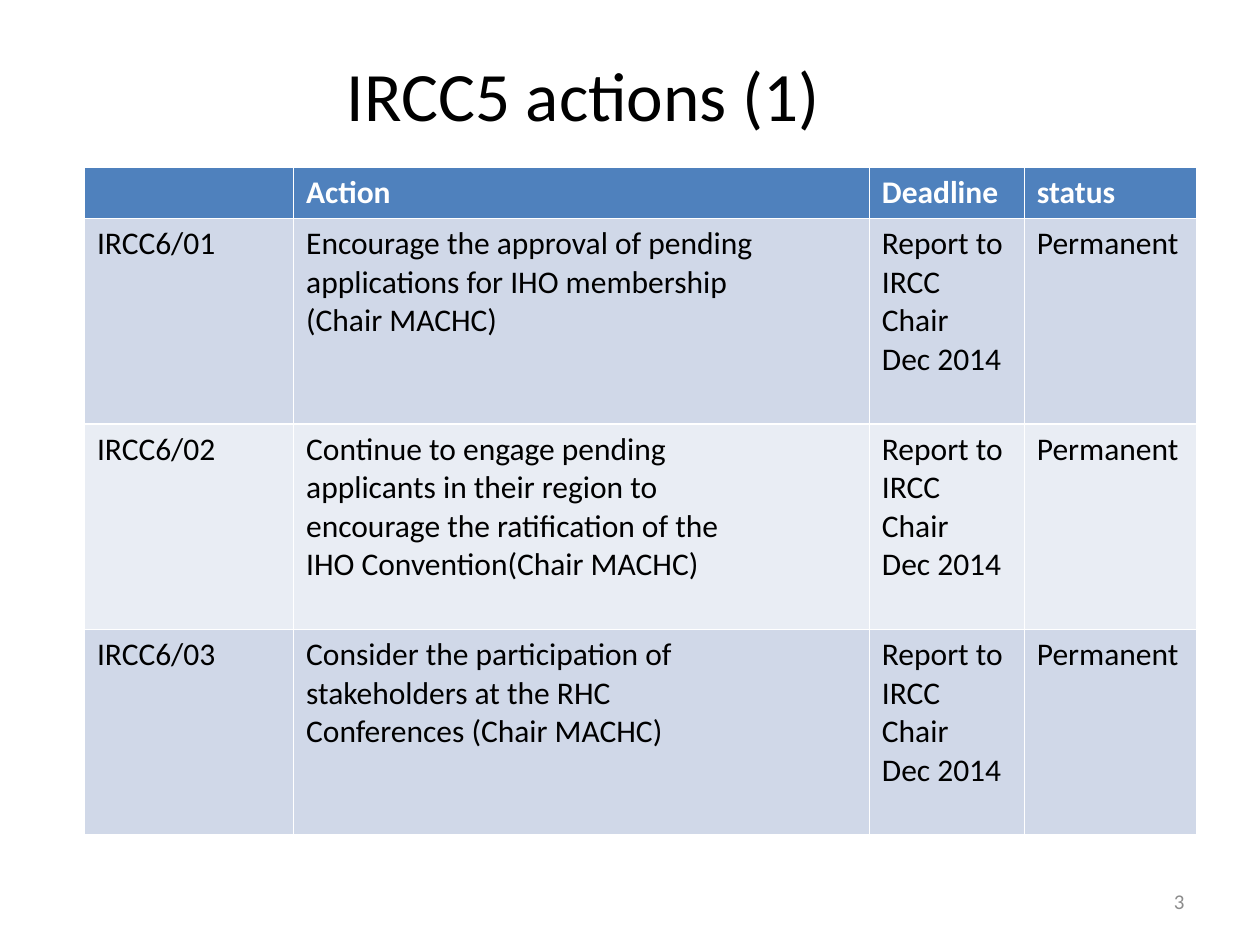
"""Build the IRCC5 actions slide with its title, action table and page number."""
from pptx import Presentation
from pptx import util as u
from pptx.dml import color
from pptx.enum import text

COLORS = {
    "text": "000000",
    "header": "4F81BD",
    "header_text": "FFFFFF",
    "odd_row": "D0D8E8",
    "even_row": "E9EDF4",
    "page": "8C8C8C",
}
DEADLINE = "Report to\nIRCC Chair\nDec 2014"
ROWS = [
    ("", "Action", "Deadline", "status"),
    ("IRCC6/01",
     "Encourage the approval of pending\napplications for IHO membership\n(Chair MACHC)",
     DEADLINE, "Permanent"),
    ("IRCC6/02",
     "Continue to engage pending\napplicants in their region to\n"
     "encourage the ratification of the\nIHO Convention(Chair MACHC)",
     DEADLINE, "Permanent"),
    ("IRCC6/03",
     "Consider the participation of\nstakeholders at the RHC\nConferences (Chair MACHC)",
     DEADLINE, "Permanent"),
]
COL_WIDTHS = [1.66, 4.57, 1.23, 1.37]
ROW_HEIGHTS = [0.4, 1.63, 1.63, 1.63]


def format_text(tf, size, name, bold=False, align=text.PP_ALIGN.LEFT):
    """Format every run in a text frame."""
    for p in tf.paragraphs:
        p.alignment = align
        for r in p.runs:
            r.font.size = u.Pt(size)
            r.font.name = "Calibri"
            r.font.bold = bold
            r.font.color.rgb = color.RGBColor.from_string(COLORS[name])


prs = Presentation()
prs.slide_width, prs.slide_height = u.Inches(10), u.Inches(7.5)
s = prs.slides.add_slide(prs.slide_layouts[5])

title = s.shapes.title
title.left, title.top = u.Inches(0.42), u.Inches(0.42)
title.width, title.height = u.Inches(8.42), u.Inches(0.65)
tf = title.text_frame
tf.text = "IRCC5 actions (1)"
tf.auto_size = text.MSO_AUTO_SIZE.NONE
tf.vertical_anchor = text.MSO_ANCHOR.MIDDLE
format_text(tf, 39.6, "text", align=text.PP_ALIGN.CENTER)

table = s.shapes.add_table(
    len(ROWS), len(COL_WIDTHS), u.Inches(0.67), u.Inches(1.33),
    u.Inches(sum(COL_WIDTHS)), u.Inches(sum(ROW_HEIGHTS))).table
for column, width in zip(table.columns, COL_WIDTHS):
    column.width = u.Inches(width)
for i, (values, height) in enumerate(zip(ROWS, ROW_HEIGHTS)):
    table.rows[i].height = u.Inches(height)
    header = i == 0
    fill = "header" if header else "odd_row" if i % 2 else "even_row"
    for j, value in enumerate(values):
        cell = table.cell(i, j)
        cell.text_frame.text = value
        cell.fill.solid()
        cell.fill.fore_color.rgb = color.RGBColor.from_string(COLORS[fill])
        format_text(cell.text_frame, 18, "header_text" if header else "text", bold=header)

page = s.shapes.add_textbox(u.Inches(7.17), u.Inches(6.95), u.Inches(2.33), u.Inches(0.4))
tf = page.text_frame
tf.text = "3"
tf.word_wrap = True
tf.vertical_anchor = text.MSO_ANCHOR.MIDDLE
format_text(tf, 12, "page", align=text.PP_ALIGN.RIGHT)

prs.save("out.pptx")
